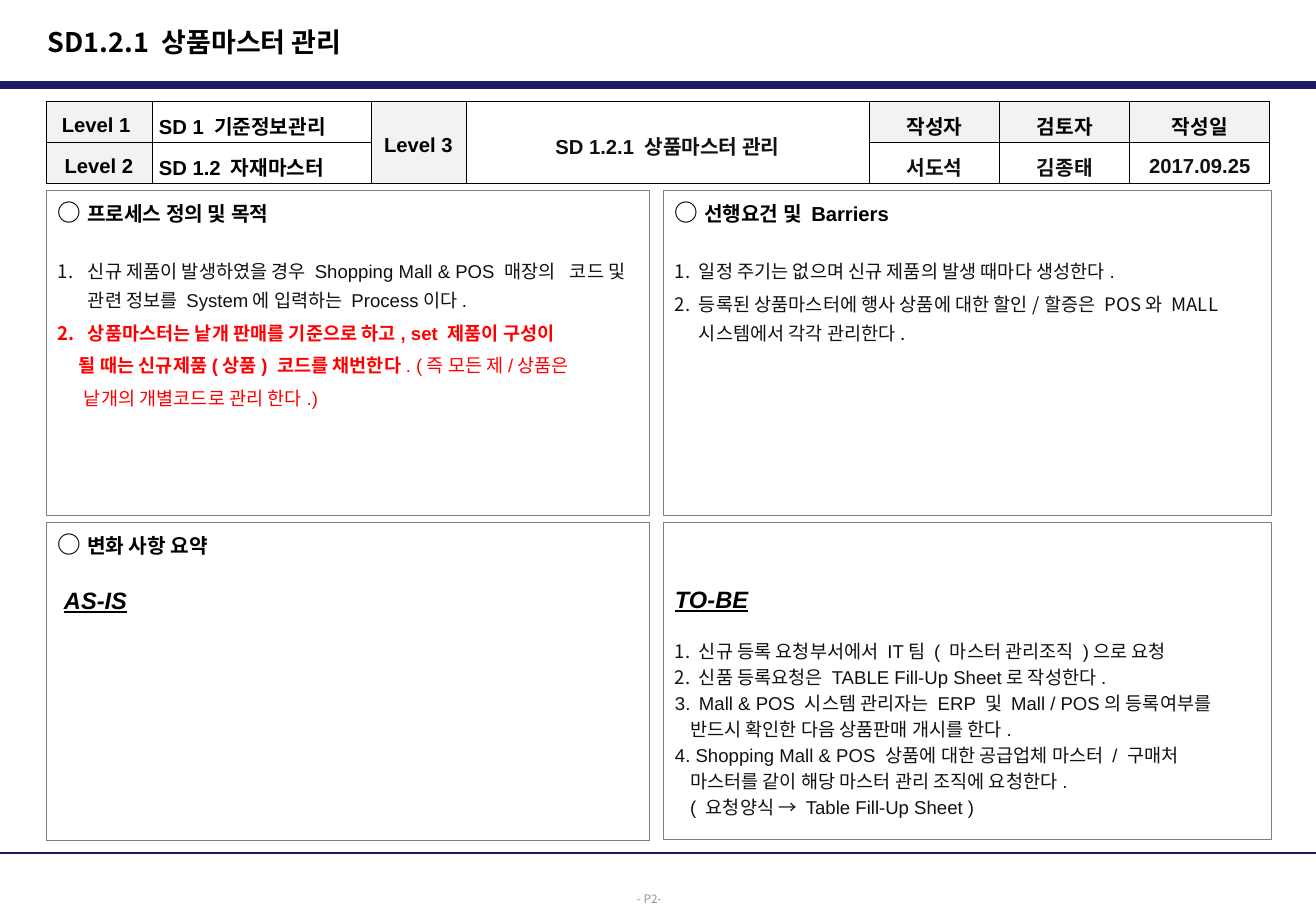
"""Build the process definition slide for product master management."""
from lxml import etree
from pptx import Presentation, util as u
from pptx.dml.color import RGBColor
from pptx.enum import shapes, text
from pptx.oxml import ns

PX = 7526
BLACK = RGBColor(0, 0, 0)
INK = RGBColor(0x11, 0x11, 0x11)
RED = RGBColor(0xFF, 0, 0)
NAVY = RGBColor(0x19, 0x19, 0x66)
GREY = RGBColor(0x80, 0x80, 0x80)
PALE = RGBColor(0x96, 0x96, 0x96)
HEADER = RGBColor(0xF2, 0xF2, 0xF2)
KOREAN = "Noto Sans CJK KR"

CIRCLE = dict(size=u.Pt(14), bold=True, name="Arial", color=BLACK)
HEADING = {**CIRCLE, "size": u.Pt(12)}
STATE = {**CIRCLE, "italic": True, "underline": True}
BODY = dict(size=u.Pt(11), bold=False, name="Arial", color=INK)
BODY_KOREAN = {**BODY, "name": KOREAN}
WARNING = {**BODY, "color": RED}
WARNING_BOLD = {**WARNING, "bold": True}
TITLE = dict(size=u.Pt(16), bold=True, name=KOREAN, color=BLACK)
PAGE = dict(size=u.Pt(7), bold=False, name=KOREAN, color=PALE)


def add_runs(paragraph, runs):
    for words, style in runs:
        run = paragraph.add_run()
        run.text = words
        for key, value in style.items():
            if key == "color":
                run.font.color.rgb = value
            else:
                setattr(run.font, key, value)
        etree.SubElement(run.font._element, ns.qn("a:ea"), typeface=KOREAN)


def set_frame(frame, **settings):
    for key, value in settings.items():
        setattr(frame, key, value)


deck = Presentation()
deck.slide_width, deck.slide_height = 1316 * PX, 911 * PX
slide = deck.slides.add_slide(deck.slide_layouts[6])

for y, weight in ((85, 4.5), (853, 1.5)):
    rule = slide.shapes.add_connector(shapes.MSO_CONNECTOR.STRAIGHT, 0, y * PX, 1316 * PX, y * PX)
    rule.line.color.rgb = NAVY
    rule.line.width = u.Pt(weight)
    etree.SubElement(rule._element.spPr, ns.qn("a:effectLst"))

for box, words, style, wrap in (
    ((36, 19, 869, 45), "SD1.2.1 상품마스터 관리", TITLE, True),
    ((625, 884, 61, 29), "- P2-", PAGE, False),
):
    label = slide.shapes.add_textbox(*(n * PX for n in box)).text_frame
    set_frame(label, word_wrap=wrap, vertical_anchor=text.MSO_ANCHOR.MIDDLE)
    add_runs(label.paragraphs[0], [(words, style)])

column_widths = (106, 219, 95, 403, 131, 130, 140)
cell_words = (
    ("Level 1 ", "SD 1 기준정보관리", "Level 3", "SD 1.2.1 상품마스터 관리", "작성자", "검토자", "작성일"),
    ("Level 2", "SD 1.2 자재마스터", "", "", "서도석", "김종태", "2017.09.25"),
)
shaded = {(0, 0), (1, 0), (0, 2), (1, 2), (0, 4), (0, 5), (0, 6)}
ink_cells = {(0, 3), (1, 4), (1, 5), (1, 6)}
levels = slide.shapes.add_table(2, 7, 46 * PX, 101 * PX, 1224 * PX, 82 * PX).table
for column, width in zip(levels.columns, column_widths):
    column.width = width * PX
for r, row_words in enumerate(cell_words):
    levels.rows[r].height = 41 * PX
    for c, words in enumerate(row_words):
        cell = levels.cell(r, c)
        set_frame(cell, vertical_anchor=text.MSO_ANCHOR.MIDDLE, margin_left=7 * PX,
                  margin_right=7 * PX, margin_top=PX, margin_bottom=PX)
        for side in ("lnL", "lnR", "lnT", "lnB"):
            edge = etree.SubElement(cell._tc.get_or_add_tcPr(), ns.qn("a:" + side), w="6350")
            paint = etree.SubElement(edge, ns.qn("a:solidFill"))
            etree.SubElement(paint, ns.qn("a:srgbClr"), val=str(BLACK))
        if (r, c) in shaded:
            cell.fill.solid()
            cell.fill.fore_color.rgb = HEADER
        else:
            cell.fill.background()
        if words:
            paragraph = cell.text_frame.paragraphs[0]
            paragraph.alignment = text.PP_ALIGN.LEFT if c == 1 else text.PP_ALIGN.CENTER
            paragraph.line_spacing = u.Pt(18 if words.isascii() else 22)
            color = INK if (r, c) in ink_cells else BLACK
            add_runs(paragraph, [(words, {**HEADING, "color": color})])
for c in (2, 3):
    levels.cell(0, c).merge(levels.cell(1, c))

panels = (
    ((46, 190, 603, 325), 6, (
        (18, 0, 0, False, [("○ ", CIRCLE), ("프로세스 정의 및 목적", HEADING)]),
        (17.2, 16, 30, True, [("신규 제품이 발생하였을 경우 Shopping Mall & POS 매장의\t코드 및 관련 정보를 System에 입력하는 Process이다.", BODY)]),
        (17.2, 2, 30, True, [("상품마스터는 낱개 판매를 기준으로 하고, set 제품이 구성이", WARNING_BOLD)]),
        (17.2, 2.2, 21, False, [("될 때는 신규제품(상품) 코드를 채번한다", WARNING_BOLD), (". (즉 모든 제/상품은", WARNING)]),
        (17.2, 2.2, 26, False, [("낱개의 개별코드로 관리 한다.)", WARNING)]),
    )),
    ((663, 190, 608, 325), 6, (
        (18, 0, 0, False, [("○ ", CIRCLE), ("선행요건 및 Barriers", HEADING)]),
        (17.2, 16, 24, True, [("일정 주기는 없으며 신규 제품의 발생 때마다 생성한다.", BODY)]),
        (17.2, 2, 24, True, [("등록된 상품마스터에 행사 상품에 대한 할인/할증은 POS와 MALL 시스템에서 각각 관리한다.", BODY_KOREAN)]),
    )),
    ((46, 522, 603, 318), 6, (
        (18, 0, 0, False, [("○ ", CIRCLE), ("변화 사항 요약", HEADING)]),
        (16, 17, 6, False, [("AS-IS", STATE)]),
    )),
    ((663, 522, 608, 317), 64, (
        (16, 0, 0, False, [("TO-BE", STATE)]),
        (13, 16, 24, True, [("신규 등록 요청부서에서 IT팀 ( 마스터 관리조직 )으로 요청", BODY)]),
        (13, 2.4, 24, True, [("신품 등록요청은 TABLE Fill-Up Sheet로 작성한다.", BODY)]),
        (13, 2.4, 24, True, [("Mall & POS 시스템 관리자는 ERP 및 Mall / POS의 등록여부를", BODY)]),
        (13, 2.4, 15, False, [("반드시 확인한 다음 상품판매 개시를 한다.", BODY)]),
        (13, 2.4, 0, False, [("4. Shopping Mall & POS 상품에 대한 공급업체 마스터 / 구매처", BODY)]),
        (13, 2.4, 15, False, [("마스터를 같이 해당 마스터 관리 조직에 요청한다.", BODY)]),
        (13, 2.4, 15, False, [("( 요청양식 → Table Fill-Up Sheet )", BODY)]),
    )),
)
for box, top_margin, lines in panels:
    panel = slide.shapes.add_shape(shapes.MSO_SHAPE.RECTANGLE, *(n * PX for n in box))
    panel.shadow.inherit = False
    panel.fill.background()
    panel.line.color.rgb = GREY
    panel.line.width = u.Pt(0.25)
    frame = panel.text_frame
    set_frame(frame, word_wrap=True, vertical_anchor=text.MSO_ANCHOR.TOP, margin_left=12 * PX,
              margin_right=12 * PX, margin_top=top_margin * PX, margin_bottom=6 * PX)
    for i, (height, before, indent, numbered, runs) in enumerate(lines):
        paragraph = frame.add_paragraph() if i else frame.paragraphs[0]
        set_frame(paragraph, alignment=text.PP_ALIGN.LEFT, line_spacing=u.Pt(height),
                  space_before=u.Pt(before))
        properties = paragraph._p.get_or_add_pPr()
        properties.set("marL", str(indent * PX))
        properties.set("indent", str(-indent * PX if numbered else 0))
        if numbered:
            etree.SubElement(properties, ns.qn("a:buFont"), typeface="Arial")
            etree.SubElement(properties, ns.qn("a:buAutoNum"), type="arabicPeriod")
        if "\t" in runs[0][0]:
            tabs = etree.SubElement(properties, ns.qn("a:tabLst"))
            etree.SubElement(tabs, ns.qn("a:tab"), pos=str(512 * PX), algn="l")
        add_runs(paragraph, runs)

deck.save("out.pptx")
